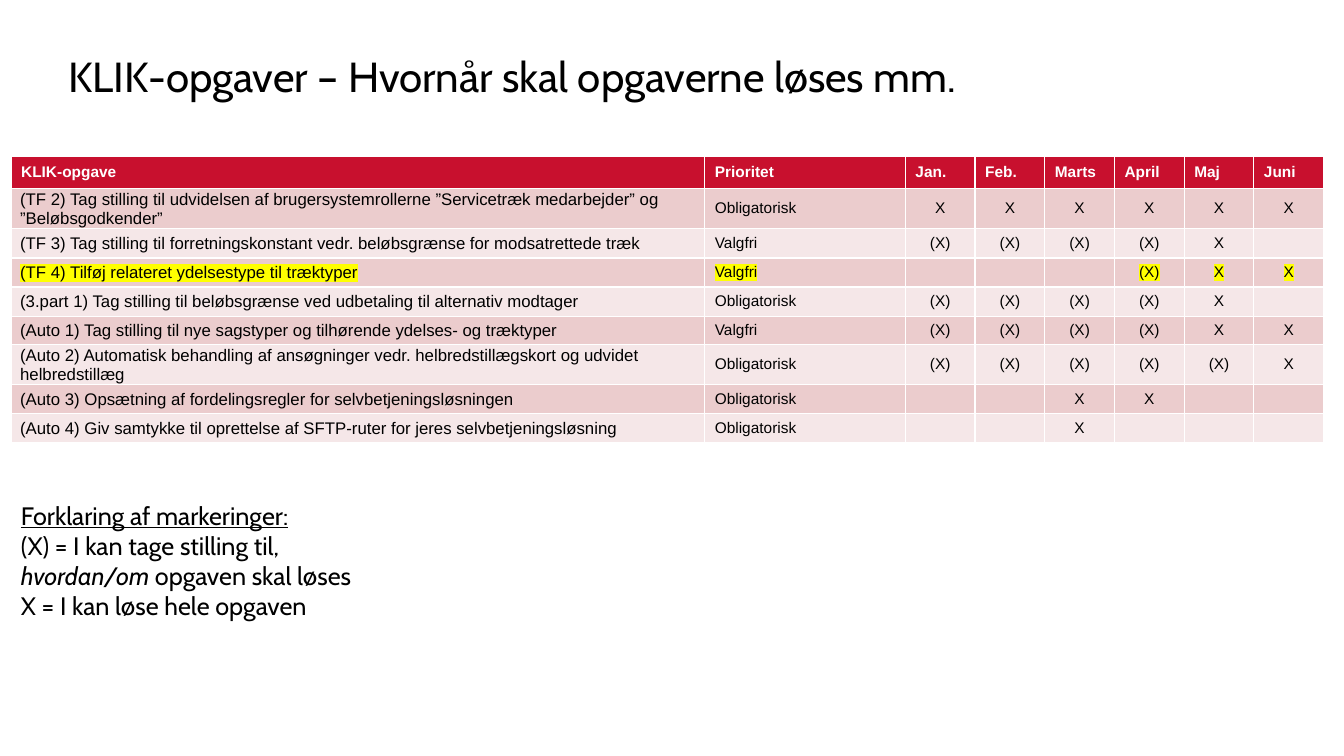
from lxml import etree
from pptx import Presentation
from pptx import util as u
from pptx.dml import color
from pptx.enum import text
from pptx.oxml import ns

TITLE = "KLIK-opgaver – Hvornår skal opgaverne løses mm."
HEADERS = ["KLIK-opgave", "Prioritet", "Jan.", "Feb.", "Marts", "April", "Maj", "Juni"]
TASKS = [
    ("(TF 2) Tag stilling til udvidelsen af brugersystemrollerne ”Servicetræk medarbejder” og ”Beløbsgodkender”",
     "Obligatorisk", "X", "X", "X", "X", "X", "X"),
    ("(TF 3) Tag stilling til forretningskonstant vedr. beløbsgrænse for modsatrettede træk",
     "Valgfri", "(X)", "(X)", "(X)", "(X)", "X", ""),
    ("(TF 4) Tilføj relateret ydelsestype til træktyper",
     "Valgfri", "", "", "", "(X)", "X", "X"),
    ("(3.part 1) Tag stilling til beløbsgrænse ved udbetaling til alternativ modtager",
     "Obligatorisk", "(X)", "(X)", "(X)", "(X)", "X", ""),
    ("(Auto 1) Tag stilling til nye sagstyper og tilhørende ydelses- og træktyper",
     "Valgfri", "(X)", "(X)", "(X)", "(X)", "X", "X"),
    ("(Auto 2) Automatisk behandling af ansøgninger vedr. helbredstillægskort og udvidet helbredstillæg",
     "Obligatorisk", "(X)", "(X)", "(X)", "(X)", "(X)", "X"),
    ("(Auto 3) Opsætning af fordelingsregler for selvbetjeningsløsningen",
     "Obligatorisk", "", "", "X", "X", "", ""),
    ("(Auto 4) Giv samtykke til oprettelse af SFTP-ruter for jeres selvbetjeningsløsning",
     "Obligatorisk", "", "", "X", "", "", ""),
]
HIGHLIGHTED_ROW = 3
TALL_ROWS = (1, 6)
LEGEND = [
    [("Forklaring af markeringer:", "underline")],
    [("(X) = I kan tage stilling til, ", None), ("hvordan/om", "italic"), (" opgaven skal løses", None)],
    [("X = I kan løse hele opgaven", None)],
]
COLORS = {"header": "C8102E", "odd": "EBCCCD", "even": "F5E7E8",
          "text": "000000", "header_text": "FFFFFF", "highlight": "FFFF00"}
TABLE_WIDTH, TASK_WIDTH, PRIORITY_WIDTH = 13.02, 6.88, 1.99
MONTH_WIDTH = (TABLE_WIDTH - TASK_WIDTH - PRIORITY_WIDTH) / 6


def rgb(name):
    return color.RGBColor.from_string(COLORS[name])


def add_run(paragraph, content, font_name, size, color_name="text"):
    run = paragraph.add_run()
    run.text = content
    run.font.name = font_name
    run.font.size = u.Pt(size)
    run.font.color.rgb = rgb(color_name)
    return run


def highlight(run):
    marker = etree.Element(ns.qn("a:highlight"))
    etree.SubElement(marker, ns.qn("a:srgbClr"), val=COLORS["highlight"])
    run.font._element.find(ns.qn("a:solidFill")).addnext(marker)


def fill_cell(cell, content, row, column):
    is_header = row == 0
    is_task = column == 0 and not is_header
    size = 12 if is_task else 11
    cell.fill.solid()
    cell.fill.fore_color.rgb = rgb("header" if is_header else "odd" if row % 2 else "even")
    cell.vertical_anchor = text.MSO_ANCHOR.MIDDLE
    paragraph = cell.text_frame.paragraphs[0]
    if is_task:
        cell.margin_left = cell.margin_top = cell.margin_right = u.Inches(0.01)
        cell.margin_bottom = 0
        properties = paragraph._p.get_or_add_pPr()
        properties.set("marL", str(u.Inches(0.08)))
        properties.set("indent", "0")
    elif column > 1 and not is_header:
        paragraph.alignment = text.PP_ALIGN.CENTER
    if not content:
        etree.SubElement(paragraph._p, ns.qn("a:endParaRPr"), sz=str(size * 100))
        return
    run = add_run(paragraph, content, "Arial", size, "header_text" if is_header else "text")
    run.font.bold = is_header
    if row == HIGHLIGHTED_ROW:
        highlight(run)


def add_title(slide):
    title = slide.shapes.title
    title.left, title.top, title.width, title.height = map(u.Inches, (0.68, 0.63, 11.92, 0.92))
    frame = title.text_frame
    frame.margin_left = frame.margin_top = frame.margin_right = frame.margin_bottom = 0
    frame.vertical_anchor = text.MSO_ANCHOR.TOP
    frame.auto_size = text.MSO_AUTO_SIZE.NONE
    paragraph = frame.paragraphs[0]
    paragraph.alignment = text.PP_ALIGN.LEFT
    paragraph.line_spacing = u.Pt(27)
    add_run(paragraph, TITLE, "Cabin", 30)


def add_task_table(slide):
    rows = [HEADERS, *TASKS]
    heights = [0.32] + [0.4 if row in TALL_ROWS else 0.28 for row in range(1, len(rows))]
    table = slide.shapes.add_table(
        len(rows), len(HEADERS), u.Inches(0.11), u.Inches(1.55),
        u.Inches(TABLE_WIDTH), u.Inches(sum(heights))).table
    for column, width in zip(table.columns, [TASK_WIDTH, PRIORITY_WIDTH] + [MONTH_WIDTH] * 6):
        column.width = u.Inches(width)
    for row, (contents, height) in enumerate(zip(rows, heights)):
        table.rows[row].height = u.Inches(height)
        for column, content in enumerate(contents):
            fill_cell(table.cell(row, column), content, row, column)


def add_legend(slide):
    legend = slide.shapes.add_textbox(*map(u.Inches, (0.11, 4.91, 3.95, 1.31)))
    frame = legend.text_frame
    frame.word_wrap = True
    frame.auto_size = text.MSO_AUTO_SIZE.SHAPE_TO_FIT_TEXT
    for index, runs in enumerate(LEGEND):
        paragraph = frame.add_paragraph() if index else frame.paragraphs[0]
        for content, style in runs:
            run = add_run(paragraph, content, "Cabin", 18)
            run.font.underline = style == "underline"
            run.font.italic = style == "italic"


def main():
    presentation = Presentation()
    presentation.slide_width = u.Inches(13.33)
    presentation.slide_height = u.Inches(7.5)
    slide = presentation.slides.add_slide(presentation.slide_layouts[5])
    add_title(slide)
    add_task_table(slide)
    add_legend(slide)
    presentation.save("out.pptx")


if __name__ == "__main__":
    main()
